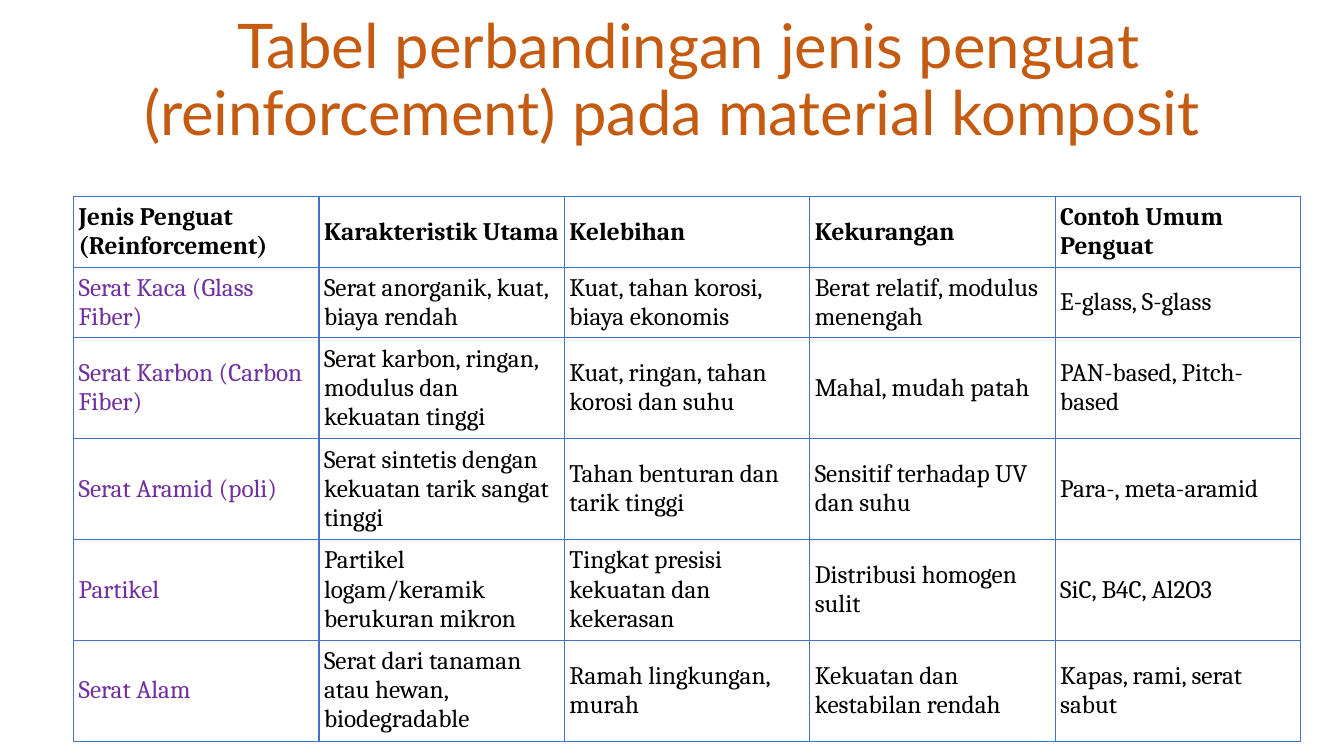
from lxml import etree
from pptx import Presentation
from pptx import util as u
from pptx.dml.color import RGBColor
from pptx.enum import text
from pptx.oxml import ns

BLACK = RGBColor(0x00, 0x00, 0x00)
ORANGE = RGBColor(0xC5, 0x5A, 0x11)
PURPLE = RGBColor(0x70, 0x30, 0xA0)
BLUE = RGBColor(0x44, 0x72, 0xC4)

SLIDE_WIDTH, SLIDE_HEIGHT = u.Inches(13.33), u.Inches(7.5)
TABLE_WIDTH, TABLE_HEIGHT = u.Inches(12.17), u.Inches(5.38)
SHORT_ROW, TALL_ROW = u.Inches(0.62), u.Inches(0.88)
CELL_MARGIN = u.Inches(0.05)

TITLE = "Tabel perbandingan jenis penguat (reinforcement) pada material komposit"
COMPARISON = [
    ["Jenis Penguat (Reinforcement)", "Karakteristik Utama", "Kelebihan",
     "Kekurangan", "Contoh Umum Penguat"],
    ["Serat Kaca (Glass Fiber)", "Serat anorganik, kuat, biaya rendah",
     "Kuat, tahan korosi, biaya ekonomis", "Berat relatif, modulus menengah",
     "E-glass, S-glass"],
    ["Serat Karbon (Carbon Fiber)",
     "Serat karbon, ringan, modulus dan kekuatan tinggi",
     "Kuat, ringan, tahan korosi dan suhu", "Mahal, mudah patah",
     "PAN-based, Pitch-based"],
    ["Serat Aramid (poli)",
     "Serat sintetis dengan kekuatan tarik sangat tinggi",
     "Tahan benturan dan tarik tinggi", "Sensitif terhadap UV dan suhu",
     "Para-, meta-aramid"],
    ["Partikel", "Partikel logam/keramik berukuran mikron",
     "Tingkat presisi kekuatan dan kekerasan", "Distribusi homogen sulit",
     "SiC, B4C, Al2O3"],
    ["Serat Alam", "Serat dari tanaman atau hewan, biodegradable",
     "Ramah lingkungan, murah", "Kekuatan dan kestabilan rendah",
     "Kapas, rami, serat sabut"],
]


def write(frame, words, font, size, color=BLACK, bold=False,
          align=text.PP_ALIGN.LEFT, spacing=1.0):
    """Fill the first paragraph of a text frame and return it."""
    para = frame.paragraphs[0]
    para.alignment = align
    para.line_spacing = spacing
    span = para.add_run()
    span.text = words
    span.font.name = font
    span.font.size = u.Pt(size)
    span.font.bold = bold
    span.font.color.rgb = color
    return para


def add_title(page):
    box = page.shapes.add_textbox(u.Inches(0.92), u.Inches(0.09),
                                  u.Inches(11.5), u.Inches(1.45))
    frame = box.text_frame
    frame.word_wrap = True
    frame.vertical_anchor = text.MSO_ANCHOR.MIDDLE
    para = write(frame, TITLE, "Lato", 44, color=ORANGE,
                 align=text.PP_ALIGN.CENTER, spacing=0.9)
    # The first line sits slightly right of the second.
    para._p.get_or_add_pPr().set("indent", str(u.Inches(0.32)))


def outline_cell(cell):
    properties = cell._tc.get_or_add_tcPr()
    for position, side in enumerate(("lnL", "lnR", "lnT", "lnB")):
        line = etree.Element(ns.qn(f"a:{side}"), w=str(u.Pt(1)))
        fill = etree.SubElement(line, ns.qn("a:solidFill"))
        etree.SubElement(fill, ns.qn("a:srgbClr"), val=str(BLUE))
        properties.insert(position, line)


def format_cell(cell, words, **style):
    cell.margin_left = cell.margin_right = CELL_MARGIN
    cell.margin_top = cell.margin_bottom = CELL_MARGIN
    cell.vertical_anchor = text.MSO_ANCHOR.MIDDLE
    cell.fill.background()
    outline_cell(cell)
    write(cell.text_frame, words, "Cambria", 18, **style)


def add_comparison(page):
    columns = len(COMPARISON[0])
    holder = page.shapes.add_table(len(COMPARISON), columns, u.Inches(0.73),
                                   u.Inches(1.95), TABLE_WIDTH, TABLE_HEIGHT)
    table = holder.table
    table.horz_banding = False
    for column in table.columns:
        column.width = TABLE_WIDTH // columns
    for r, entries in enumerate(COMPARISON):
        table.rows[r].height = SHORT_ROW if r < 2 else TALL_ROW
        for c, words in enumerate(entries):
            is_kind = r > 0 and c == 0
            format_cell(table.cell(r, c), words, bold=r == 0,
                        color=PURPLE if is_kind else BLACK)
    holder.height = TABLE_HEIGHT


def main():
    deck = Presentation()
    deck.slide_width, deck.slide_height = SLIDE_WIDTH, SLIDE_HEIGHT
    page = deck.slides.add_slide(deck.slide_layouts[6])
    add_title(page)
    add_comparison(page)
    deck.save("out.pptx")


if __name__ == "__main__":
    main()
